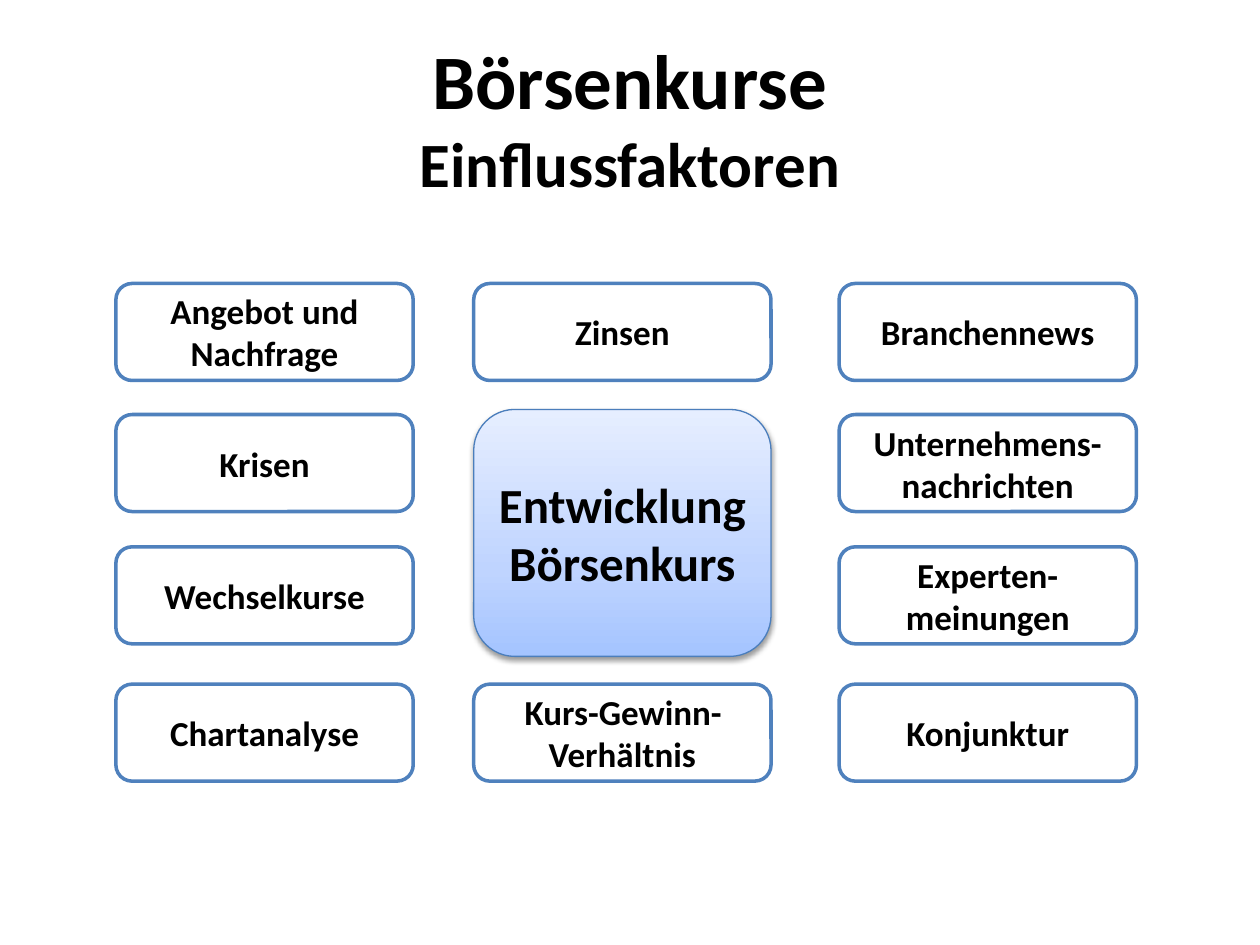
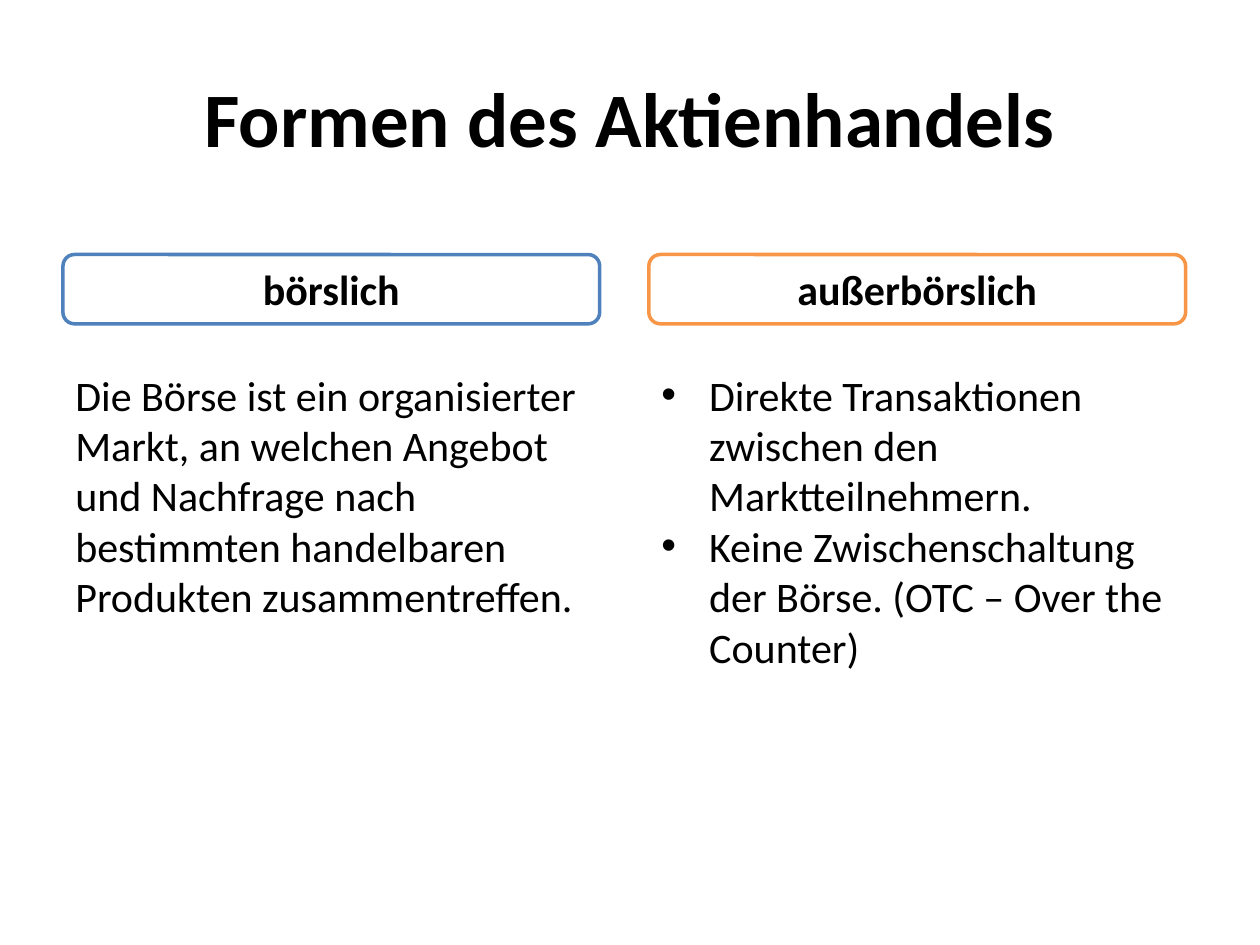
"""Build two slides on share prices and the forms of share trading."""
from dataclasses import dataclass

from lxml.etree import SubElement
from pptx import Presentation
from pptx.dml.color import RGBColor
from pptx.enum.shapes import MSO_SHAPE
from pptx.enum.text import MSO_ANCHOR, MSO_AUTO_SIZE, PP_ALIGN
from pptx.oxml.ns import qn
from pptx.util import Inches, Pt


@dataclass(frozen=True)
class Theme:
    font: str = "Calibri"
    text: str = "000000"
    surface: str = "FFFFFF"
    blue: str = "4F81BD"
    orange: str = "F79646"
    center_line: str = "4B7EBC"
    center_stops: tuple = ((0, "A4C4FF"), (35, "BFD4FF"), (100, "E6EEFF"))
    title_size: int = 44
    subtitle_size: int = 36
    center_size: int = 28
    body_size: int = 24
    factor_size: int = 20
    outline: float = 2
    center_outline: float = 0.75


THEME = Theme()

PRICE_TITLE = [("Börsenkurse", THEME.title_size), ("Einflussfaktoren", THEME.subtitle_size)]
FACTOR_COLUMNS = [
    (0.92, ["Angebot und Nachfrage", "Krisen", "Wechselkurse", "Chartanalyse"]),
    (3.76, ["Zinsen", None, None, "Kurs-Gewinn-Verhältnis"]),
    (6.66, ["Branchennews", "Unternehmens-nachrichten", "Experten-meinungen", "Konjunktur"]),
]
FACTOR_TOPS = [2.25, 3.29, 4.34, 5.43]
FACTOR_WIDTH, FACTOR_HEIGHT = 2.36, 0.77
CENTER_LINES = ["Entwicklung", "Börsenkurs"]
CENTER_PLACE = (3.76, 3.25, FACTOR_WIDTH, 1.96)

TRADING_TITLE = [("Formen des Aktienhandels", THEME.title_size)]
TRADING_FORMS = [
    {
        "heading": "börslich",
        "color": THEME.blue,
        "left": 0.5,
        "body_size": (4.26, 3.58),
        "bulleted": False,
        "body": [
            "Die Börse ist ein organisierter Markt, an welchen Angebot und Nachfrage "
            "nach bestimmten handelbaren Produkten zusammentreffen."
        ],
    },
    {
        "heading": "außerbörslich",
        "color": THEME.orange,
        "left": 5.15,
        "body_size": (4.35, 2.52),
        "bulleted": True,
        "body": [
            "Direkte Transaktionen zwischen den Marktteilnehmern.",
            "Keine Zwischenschaltung der Börse. (OTC – Over the Counter)",
        ],
    },
]
HEADING_TOP, HEADING_WIDTH, HEADING_HEIGHT = 2.02, 4.26, 0.55
BODY_TOP = 2.88
BULLET_INDENT = 0.38


def add_run(paragraph, text, size, bold=False):
    """Add one run in the shared font and text colour."""
    run = paragraph.add_run()
    run.text = text
    run.font.name = THEME.font
    run.font.size = Pt(size)
    run.font.bold = bold
    run.font.color.rgb = RGBColor.from_string(THEME.text)


def add_lines(frame, lines, size, bold=False, alignment=PP_ALIGN.LEFT, bulleted=False):
    """Fill a text frame with one paragraph for each line."""
    frame.word_wrap = True
    for index, line in enumerate(lines):
        paragraph = frame.add_paragraph() if index else frame.paragraphs[0]
        paragraph.alignment = alignment
        if bulleted:
            add_bullet(paragraph)
        add_run(paragraph, line, size, bold)


def add_bullet(paragraph):
    """Give a paragraph a hanging round bullet."""
    properties = paragraph._p.get_or_add_pPr()
    properties.set("marL", str(Inches(BULLET_INDENT)))
    properties.set("indent", str(-Inches(BULLET_INDENT)))
    SubElement(properties, qn("a:buFont")).set("typeface", "Arial")
    SubElement(properties, qn("a:buChar")).set("char", "•")


def add_title_slide(presentation, title_lines):
    """Add a title-only slide with the shared title style."""
    slide = presentation.slides.add_slide(presentation.slide_layouts[5])
    title = slide.shapes.title
    title.left, title.top, title.width, title.height = map(Inches, (0.5, 0.3, 9, 1.25))
    frame = title.text_frame
    frame.auto_size = MSO_AUTO_SIZE.NONE
    frame.vertical_anchor = MSO_ANCHOR.MIDDLE
    paragraph = frame.paragraphs[0]
    paragraph.alignment = PP_ALIGN.CENTER
    for index, (text, size) in enumerate(title_lines):
        if index:
            paragraph.add_line_break()
        add_run(paragraph, text, size, bold=True)
    return slide


def add_box(slide, place, lines, size, line_color=THEME.blue, line_width=THEME.outline):
    """Add an outlined rounded box with centred bold text."""
    shape = slide.shapes.add_shape(MSO_SHAPE.ROUNDED_RECTANGLE, *map(Inches, place))
    shape.shadow.inherit = False
    shape.fill.solid()
    shape.fill.fore_color.rgb = RGBColor.from_string(THEME.surface)
    shape.line.color.rgb = RGBColor.from_string(line_color)
    shape.line.width = Pt(line_width)
    shape.text_frame.vertical_anchor = MSO_ANCHOR.MIDDLE
    add_lines(shape.text_frame, lines, size, bold=True, alignment=PP_ALIGN.CENTER)
    return shape


def add_gradient(shape, stops):
    """Fill a shape with a gradient that runs from bottom to top."""
    shape.fill.gradient()
    shape.fill.gradient_angle = 90
    stop_list = shape._element.spPr.find(".//" + qn("a:gsLst"))
    for stop in list(stop_list):
        stop_list.remove(stop)
    for position, color in stops:
        stop = SubElement(stop_list, qn("a:gs"), pos=str(position * 1000))
        SubElement(stop, qn("a:srgbClr"), val=color)


def add_shadow(shape):
    """Give a shape a soft shadow below it."""
    effects = shape._element.spPr.find(qn("a:effectLst"))
    shadow = SubElement(
        effects, qn("a:outerShdw"), blurRad=str(Pt(3.1)), dist=str(Pt(1.6)),
        dir="5400000", rotWithShape="0",
    )
    color = SubElement(shadow, qn("a:srgbClr"), val=THEME.text)
    SubElement(color, qn("a:alpha"), val="38000")


def build_price_slide(presentation):
    """Place the influencing factors around the share price."""
    slide = add_title_slide(presentation, PRICE_TITLE)
    center = add_box(slide, CENTER_PLACE, CENTER_LINES, THEME.center_size,
                     THEME.center_line, THEME.center_outline)
    add_gradient(center, THEME.center_stops)
    add_shadow(center)
    for left, factors in FACTOR_COLUMNS:
        for top, factor in zip(FACTOR_TOPS, factors):
            if factor:
                place = (left, top, FACTOR_WIDTH, FACTOR_HEIGHT)
                add_box(slide, place, [factor], THEME.factor_size)


def build_trading_slide(presentation):
    """Set the two forms of trading side by side."""
    slide = add_title_slide(presentation, TRADING_TITLE)
    for form in TRADING_FORMS:
        place = (form["left"], HEADING_TOP, HEADING_WIDTH, HEADING_HEIGHT)
        add_box(slide, place, [form["heading"]], THEME.body_size, form["color"])
        body_place = (form["left"], BODY_TOP, *form["body_size"])
        body = slide.shapes.add_textbox(*map(Inches, body_place))
        add_lines(body.text_frame, form["body"], THEME.body_size, bulleted=form["bulleted"])


def main():
    """Create and save the presentation."""
    presentation = Presentation()
    presentation.slide_width, presentation.slide_height = Inches(10), Inches(7.5)
    build_price_slide(presentation)
    build_trading_slide(presentation)
    presentation.save("out.pptx")


if __name__ == "__main__":
    main()
